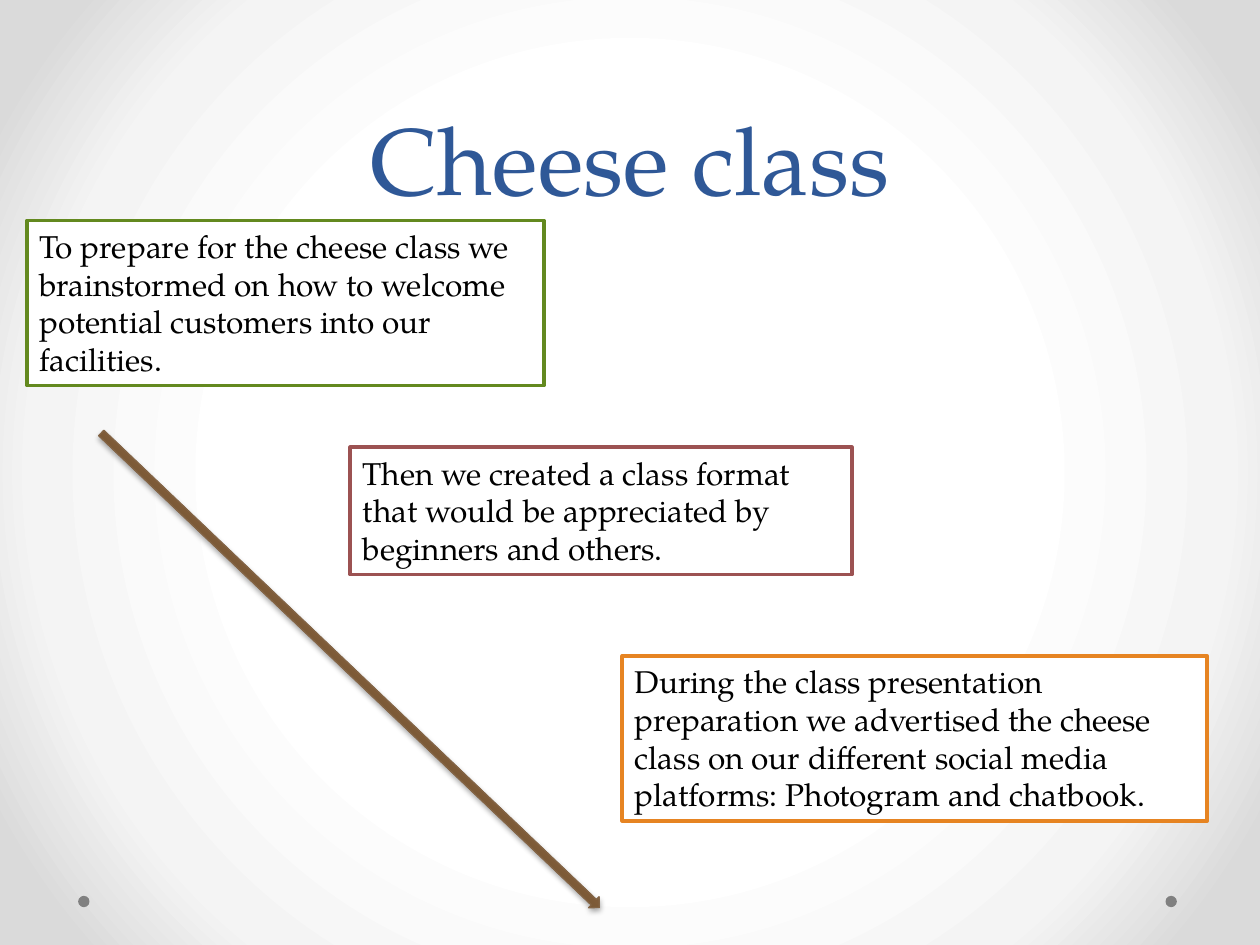
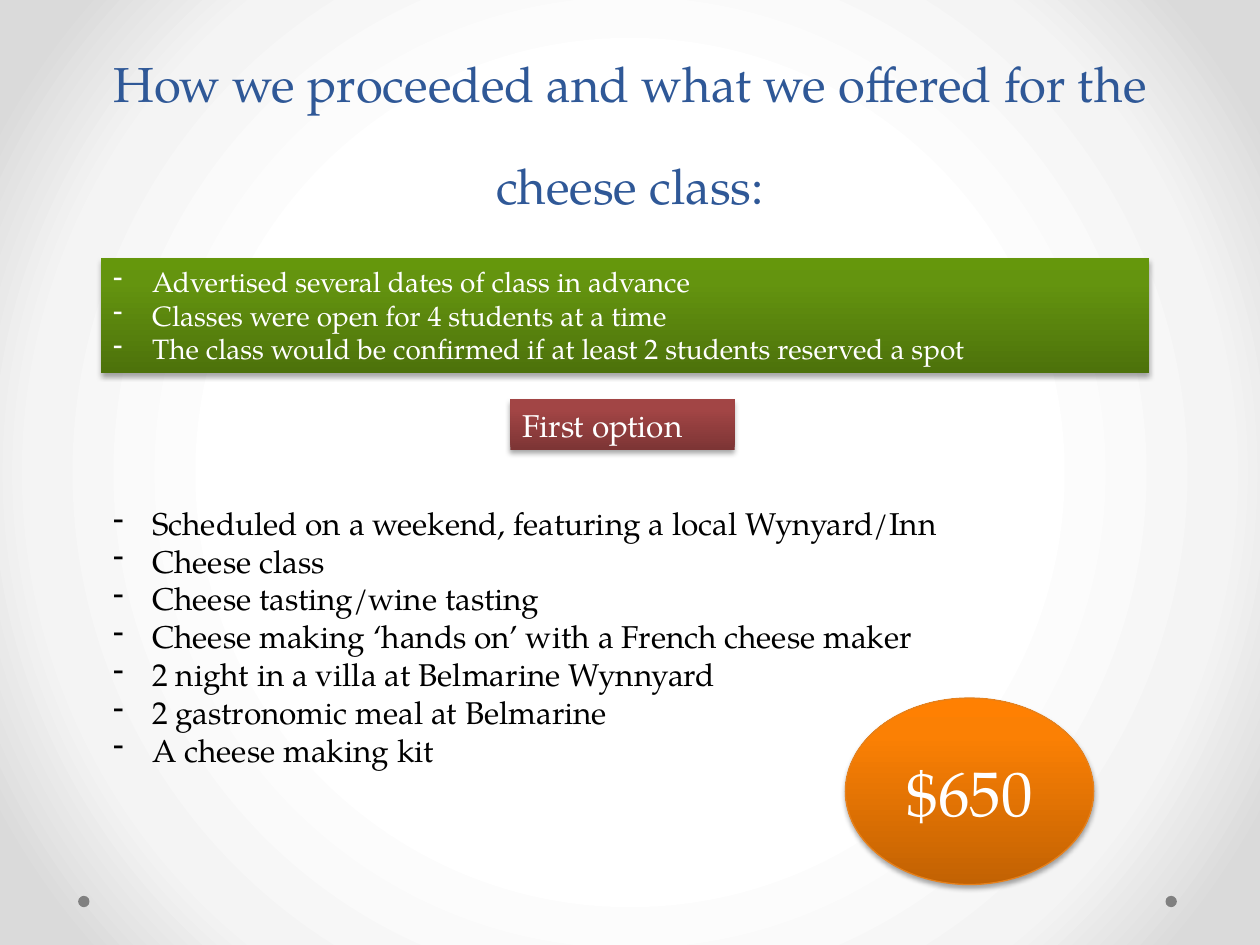
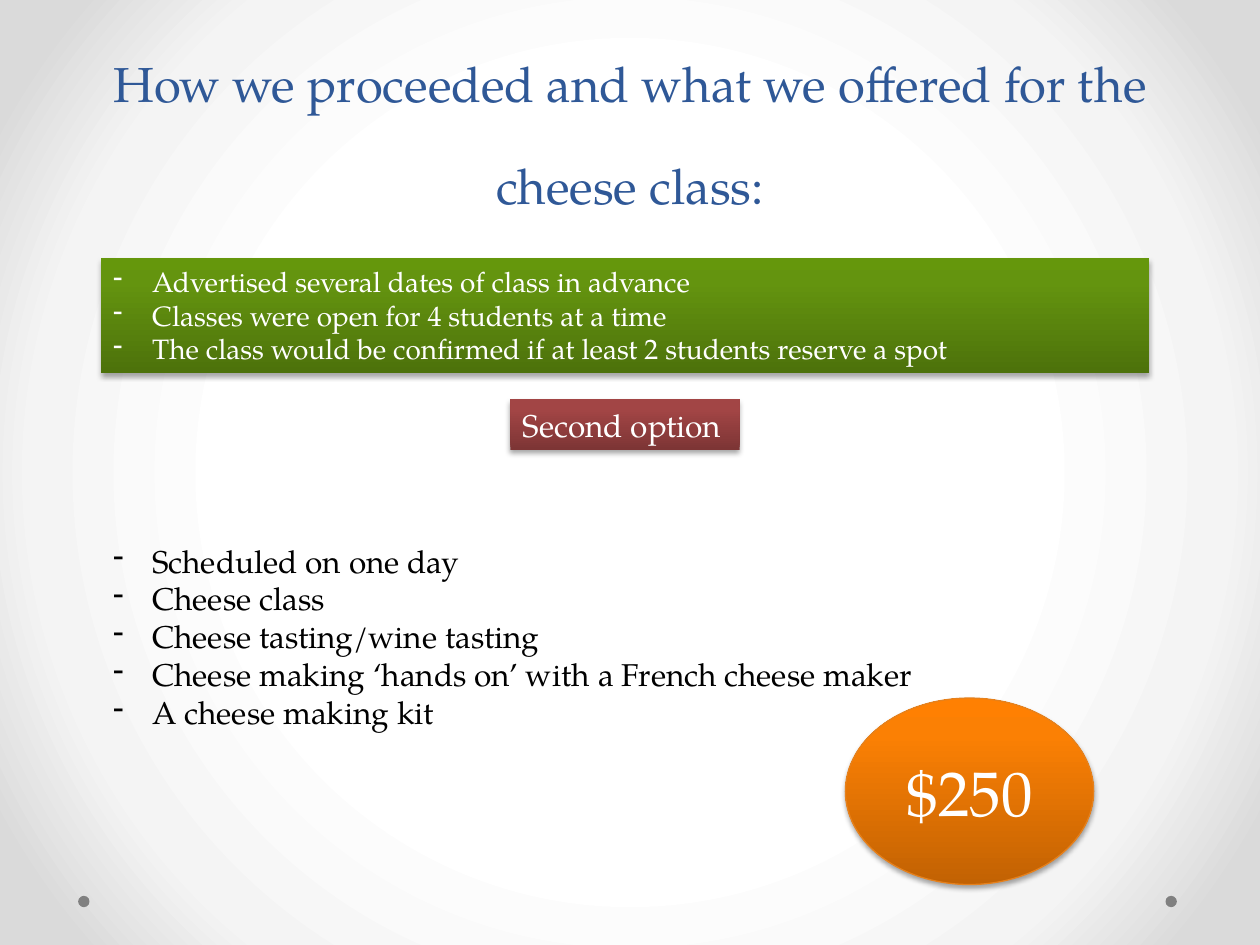
import pptx
import pptx.util
import pptx.dml.color
import pptx.enum.shapes
import pptx.enum.text
import pptx.oxml
import pptx.oxml.ns

Pt = pptx.util.Pt
MSO_SHAPE = pptx.enum.shapes.MSO_SHAPE
ANCHOR = pptx.enum.text.MSO_ANCHOR
ALIGN = pptx.enum.text.PP_ALIGN
qn = pptx.oxml.ns.qn

COLUMNS, ROWS = 100, 75
CELL = pptx.util.Inches(0.1)
FONT = "TeX Gyre Pagella"
COLORS = {
    "title": "2F5897", "text": "000000", "white": "FFFFFF", "dot": "808080",
    "green": "63891F", "red": "9C5252", "orange": "E68422",
    "arrow_edge": "836445", "price_edge": "E6811C",
}
# Gradient stops: percent and colour
GRADIENTS = {
    "backdrop": [(50, "FFFFFF"), (76, "F4F4F4"), (92, "DADADA")],
    "green": [(0, "4D720B"), (80, "64940F"), (100, "65970C")],
    "red": [(0, "7D3535"), (80, "A24545"), (100, "A44343")],
    "orange": [(0, "C26203"), (80, "FB8004"), (100, "FF8002")],
    "brown": [(0, "694C2F"), (80, "89633D"), (100, "8B633C")],
}
UPWARD = '<a:lin ang="16200000" scaled="0"/>'
RADIAL = ('<a:path path="circle">'
          '<a:fillToRect l="50000" t="50000" r="50000" b="50000"/></a:path>')

OFFER_TITLE = "How we proceeded and what we offered for the cheese class:"
STEPS = [
    ("To prepare for the cheese class we brainstormed on how to welcome "
     "potential customers into our facilities.", "green", (2.15, 17.5, 41, 13.1)),
    ("Then we created a class format that would be appreciated by beginners "
     "and others.", "red", (27.8, 35.5, 39.8, 10.1)),
    ("During the class presentation preparation we advertised the cheese class "
     "on our different social media platforms: Photogram and chatbook.",
     "orange", (49.4, 52.05, 46.4, 13.1)),
]
TASTING = [
    "Cheese class",
    "Cheese tasting/wine tasting",
    "Cheese making ‘hands on’ with a French cheese maker",
]


def xml(markup):
    return pptx.oxml.parse_xml(markup.replace(
        ">", f' {pptx.oxml.ns.nsdecls("a")}>', 1) if "/>" not in markup.split(">")[0] + ">"
        else markup.replace("/>", f' {pptx.oxml.ns.nsdecls("a")}/>', 1))


def rgb(name):
    return pptx.dml.color.RGBColor.from_string(COLORS[name])


def grid(x, y, w, h):
    return [round(v * CELL) for v in (x, y, w, h)]


def set_gradient(fill, element, name, direction):
    """Give the fill, which lies inside element, the named gradient."""
    fill.gradient()
    stops = "".join(f'<a:gs pos="{pos * 1000}"><a:srgbClr val="{color}"/></a:gs>'
                    for pos, color in GRADIENTS[name])
    old = next(element.iter(qn("a:gradFill")))
    old.getparent().replace(old, xml(
        f'<a:gradFill rotWithShape="1"><a:gsLst>{stops}</a:gsLst>{direction}</a:gradFill>'))


def add_box(slide, kind, place, fill=None, gradient=None, line=None, width=0.75):
    """Add a preset shape; one with a gradient also casts a soft shadow."""
    sp = slide.shapes.add_shape(kind, *grid(*place))
    sp.shadow.inherit = False
    if gradient:
        set_gradient(sp.fill, sp.element.spPr, gradient, UPWARD)
        sp.element.spPr.find(qn("a:effectLst")).append(xml(
            f'<a:outerShdw blurRad="{Pt(3.1)}" dist="{Pt(1.8)}" dir="5400000" rotWithShape="0">'
            '<a:srgbClr val="000000"><a:alpha val="35000"/></a:srgbClr></a:outerShdw>'))
    else:
        sp.fill.solid()
        sp.fill.fore_color.rgb = rgb(fill)
    if line:
        sp.line.color.rgb = rgb(line)
        sp.line.width = Pt(width)
    else:
        sp.line.fill.background()
    return sp


def write(sp, lines, size, color, align=ALIGN.LEFT, anchor=ANCHOR.TOP,
          dashes=False, spacing=None):
    tf = sp.text_frame
    tf.text = "\n".join(lines)
    tf.word_wrap = True
    tf.vertical_anchor = anchor
    for p in tf.paragraphs:
        p.alignment = align
        if spacing:
            p.line_spacing = Pt(spacing)
        if dashes:
            pPr = p._p.get_or_add_pPr()
            indent = round(3.1 * CELL)
            pPr.set("marL", str(indent))
            pPr.set("indent", str(-indent))
            pPr.append(xml('<a:buChar char="-"/>'))
        for r in p.runs:
            r.font.name = FONT
            r.font.size = Pt(size)
            r.font.color.rgb = rgb(color)


def add_slide(prs, title, size):
    """Add a slide with the shared title and the two footer dots."""
    slide = prs.slides.add_slide(prs.slide_layouts[6])
    for x in (6.2, 92.5):
        add_box(slide, MSO_SHAPE.OVAL, (x, 71.1, 0.9, 0.9), fill="dot")
    sp = slide.shapes.add_textbox(*grid(5, 0, 90, 17.5))
    write(sp, [title], size, "title", ALIGN.CENTER, ANCHOR.BOTTOM, spacing=58)
    return slide


def add_steps_slide(prs):
    slide = add_slide(prs, "Cheese class", 54)
    for text, color, place in STEPS:
        sp = add_box(slide, MSO_SHAPE.RECTANGLE, place, fill="white", line=color, width=2.25)
        write(sp, [text], 18, "text")
    arrow = add_box(slide, MSO_SHAPE.RIGHT_ARROW, (0.5, 52.6, 54.6, 1.2),
                    gradient="brown", line="arrow_edge")
    arrow.rotation = 43.6


def add_offer_slide(prs, option, option_width, verb, items, items_top, price):
    slide = add_slide(prs, OFFER_TITLE, 28)
    terms = add_box(slide, MSO_SHAPE.RECTANGLE, (8, 20.5, 83.2, 9.1), gradient="green")
    write(terms, ["Advertised several dates of class in advance",
                  "Classes were open for 4 students at a time",
                  f"The class would be confirmed if at least 2 students {verb} a spot"],
          16, "white", dashes=True)
    label = add_box(slide, MSO_SHAPE.RECTANGLE, (40.5, 31.7, option_width, 4), gradient="red")
    write(label, [option], 18, "white")
    content = slide.shapes.add_textbox(*grid(8, items_top, 88.6, 1 + 3 * len(items)))
    write(content, items, 18, "text", dashes=True)
    badge = add_box(slide, MSO_SHAPE.OVAL, (67.1, 55.4, 19.7, 14.8),
                    gradient="orange", line="price_edge")
    write(badge, [price], 36, "white", ALIGN.CENTER, ANCHOR.MIDDLE)


def main():
    prs = pptx.Presentation()
    prs.slide_width, prs.slide_height = COLUMNS * CELL, ROWS * CELL
    master = prs.slide_master
    set_gradient(master.background.fill, master.element, "backdrop", RADIAL)

    add_steps_slide(prs)
    add_offer_slide(
        prs, "First option", 17.8, "reserved",
        ["Scheduled on a weekend, featuring a local Wynyard/Inn", *TASTING,
         "2 night in a villa at Belmarine Wynnyard",
         "2 gastronomic meal at Belmarine", "A cheese making kit"], 39.5, "$650")
    add_offer_slide(
        prs, "Second option", 18.2, "reserve",
        ["Scheduled on one day", *TASTING, "A cheese making kit"], 42.5, "$250")
    prs.save("out.pptx")


if __name__ == "__main__":
    main()
